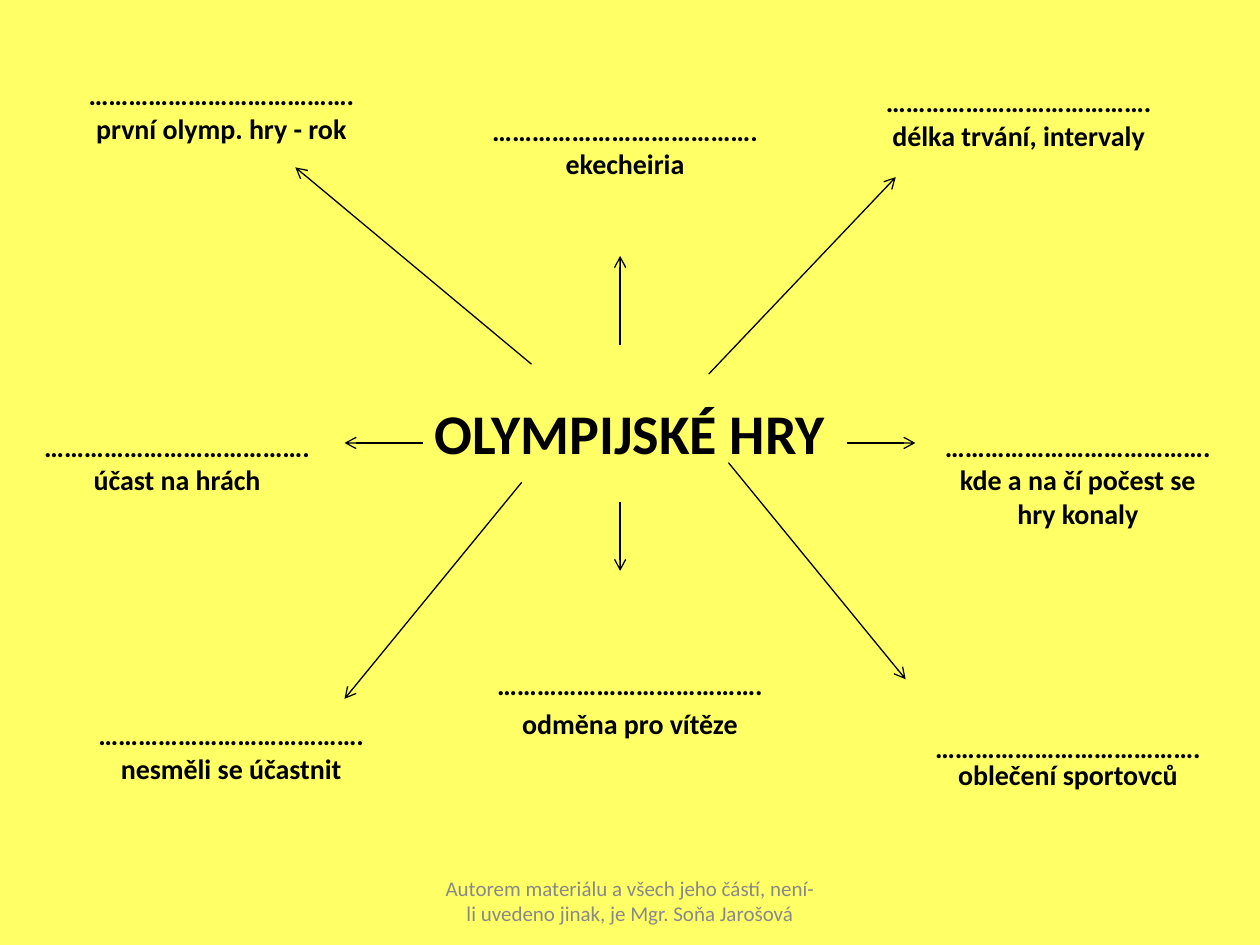
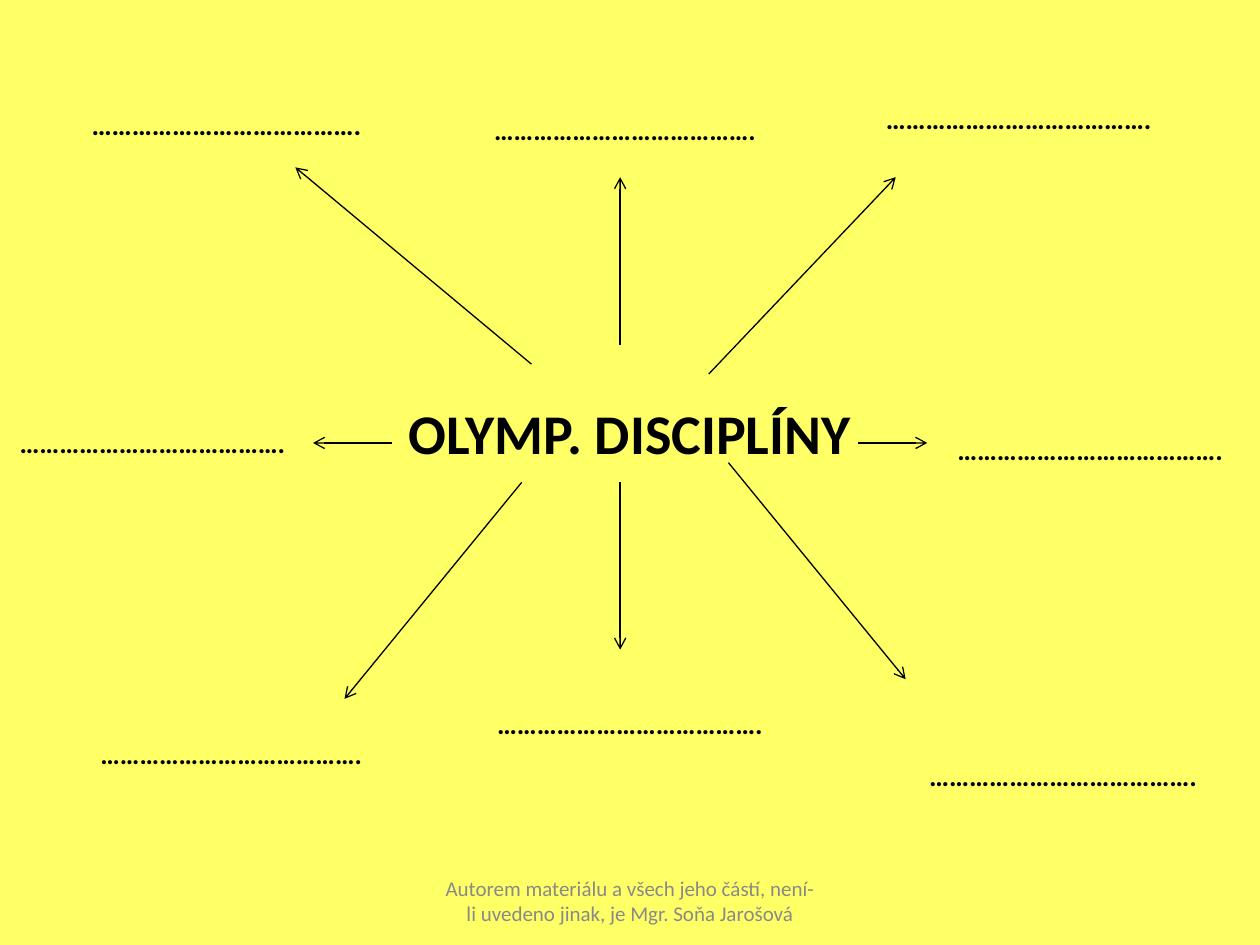
from dataclasses import dataclass

import pptx
import pptx.dml.color
import pptx.enum.shapes
import pptx.enum.text
import pptx.oxml
import pptx.oxml.ns
import pptx.presentation
import pptx.slide
import pptx.text.text
import pptx.util

COLUMNS, ROWS = 128, 96
CELL = pptx.util.Inches(10) // COLUMNS
BLANK_LAYOUT = 6
DOTS = "…" * 13 + "."
AUTHOR_NOTE = "Autorem materiálu a všech jeho částí, není-li uvedeno jinak, je Mgr. Soňa Jarošová"


@dataclass(frozen=True)
class Theme:
    font: str = "Calibri"
    background: str = "FFFF66"
    ink: str = "000000"
    muted: str = "898989"
    topic_size: float = 32
    answer_size: float = 16
    footer_size: float = 12
    arrow_width: float = 0.75


THEME = Theme()


@dataclass(frozen=True)
class Area:
    left: float
    top: float
    width: float = 31
    height: float = 10.5


@dataclass(frozen=True)
class Answer:
    """A dotted line to fill in, with an optional hint below it."""
    area: Area
    hint: str = ""
    size: float = THEME.answer_size
    line_spacing: float = 1.0
    gap: float = 0


@dataclass(frozen=True)
class Arrow:
    start: tuple[float, float]
    end: tuple[float, float]


@dataclass(frozen=True)
class MindMap:
    topic: str
    answers: list[Answer]
    arrows: list[Arrow]


TOPIC_AREA = Area(0, 40.5, COLUMNS, 7)
FOOTER_AREA = Area(43.75, 89, 40.5, 5)
TOP_AREA = Area(46, 11.5, 35)

DIAGONALS = [
    Arrow((74, 47), (92, 69)),
    Arrow((53, 49), (35, 71)),
    Arrow((54, 37), (30, 17)),
    Arrow((72, 38), (91, 18)),
]

MIND_MAPS = [
    MindMap(
        "OLYMPIJSKÉ HRY",
        [
            Answer(Area(2.5, 7.9, 40), "první olymp. hry - rok"),
            Answer(TOP_AREA, "ekecheiria"),
            Answer(Area(88, 8.6), "délka trvání, intervaly"),
            Answer(Area(94, 43.6), "kde a na čí počest se hry konaly"),
            Answer(Area(93, 74.9), "oblečení sportovců", line_spacing=0.8),
            Answer(Area(48.5, 67.8), "odměna pro vítěze", gap=3.2),
            Answer(Area(8, 72.9), "nesměli se účastnit"),
            Answer(Area(2.5, 43.6), "účast na hrách"),
        ],
        DIAGONALS + [
            Arrow((63, 51), (63, 58)),
            Arrow((86, 45), (93, 45)),
            Arrow((43, 45), (35, 45)),
            Arrow((63, 35), (63, 26)),
        ],
    ),
    MindMap(
        "OLYMP. DISCIPLÍNY",
        [
            Answer(Area(3, 10.9, 40), size=16.2),
            Answer(TOP_AREA, size=15.7),
            Answer(Area(88, 10.3)),
            Answer(Area(95.25, 43.9)),
            Answer(Area(92, 77, 32), size=16.1),
            Answer(Area(48.5, 71.8)),
            Answer(Area(8, 74.9), size=15.7),
            Answer(Area(0, 43.2)),
        ],
        DIAGONALS + [
            Arrow((63, 49), (63, 66)),
            Arrow((87.2, 45), (94.2, 45)),
            Arrow((39.8, 45), (31.8, 45)),
            Arrow((63, 35), (63, 18)),
        ],
    ),
]


def cells(count: float) -> int:
    return round(count * CELL)


def rgb(value: str) -> pptx.dml.color.RGBColor:
    return pptx.dml.color.RGBColor.from_string(value)


def add_text(slide: pptx.slide.Slide, area: Area, text: str, size: float,
             color: str = THEME.ink, bold: bool = True) -> pptx.text.text.TextFrame:
    """Add centred text, one paragraph per line, and return its text frame."""
    frame = slide.shapes.add_textbox(
        cells(area.left), cells(area.top), cells(area.width), cells(area.height)).text_frame
    frame.word_wrap = True
    frame.margin_top = frame.margin_bottom = 0
    frame.text = text
    for paragraph in frame.paragraphs:
        paragraph.alignment = pptx.enum.text.PP_ALIGN.CENTER
        for run in paragraph.runs:
            run.font.name = THEME.font
            run.font.size = pptx.util.Pt(size)
            run.font.bold = bold
            run.font.color.rgb = rgb(color)
    return frame


def add_answer(slide: pptx.slide.Slide, answer: Answer) -> None:
    text = f"{DOTS}\n{answer.hint}" if answer.hint else DOTS
    frame = add_text(slide, answer.area, text, answer.size)
    for paragraph in frame.paragraphs:
        paragraph.line_spacing = answer.line_spacing
    frame.paragraphs[-1].space_before = pptx.util.Pt(answer.gap)


def add_arrow(slide: pptx.slide.Slide, arrow: Arrow) -> None:
    connector = slide.shapes.add_connector(
        pptx.enum.shapes.MSO_CONNECTOR.STRAIGHT,
        *map(cells, arrow.start), *map(cells, arrow.end))
    connector.line.color.rgb = rgb(THEME.ink)
    connector.line.width = pptx.util.Pt(THEME.arrow_width)
    properties = connector.element.spPr
    outline = properties.find(pptx.oxml.ns.qn("a:ln"))
    outline.append(pptx.oxml.parse_xml(
        f'<a:tailEnd {pptx.oxml.ns.nsdecls("a")} type="arrow"/>'))
    properties.append(pptx.oxml.parse_xml(
        f'<a:effectLst {pptx.oxml.ns.nsdecls("a")}/>'))


def add_footer(slide: pptx.slide.Slide) -> None:
    frame = add_text(slide, FOOTER_AREA, AUTHOR_NOTE, THEME.footer_size, THEME.muted, bold=False)
    frame.vertical_anchor = pptx.enum.text.MSO_ANCHOR.MIDDLE


def add_mind_map(deck: pptx.presentation.Presentation, mind_map: MindMap) -> None:
    slide = deck.slides.add_slide(deck.slide_layouts[BLANK_LAYOUT])
    slide.background.fill.solid()
    slide.background.fill.fore_color.rgb = rgb(THEME.background)
    add_text(slide, TOPIC_AREA, mind_map.topic, THEME.topic_size)
    add_footer(slide)
    for arrow in mind_map.arrows:
        add_arrow(slide, arrow)
    for answer in mind_map.answers:
        add_answer(slide, answer)


def main() -> None:
    deck = pptx.Presentation()
    deck.slide_width, deck.slide_height = cells(COLUMNS), cells(ROWS)
    for mind_map in MIND_MAPS:
        add_mind_map(deck, mind_map)
    deck.save("out.pptx")


if __name__ == "__main__":
    main()
